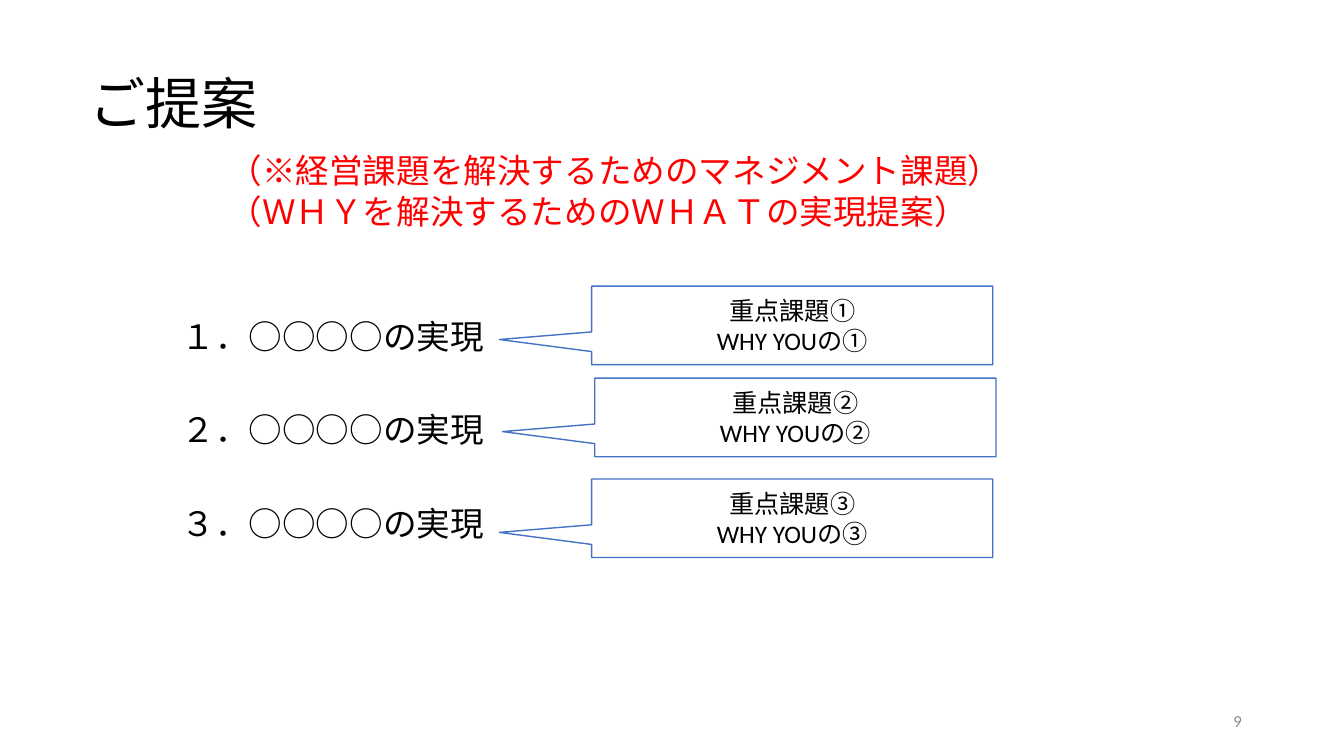
from dataclasses import dataclass

from lxml.etree import SubElement
from pptx import Presentation
from pptx.dml.color import RGBColor
from pptx.enum.shapes import MSO_SHAPE
from pptx.enum.text import MSO_ANCHOR as Anchor, MSO_AUTO_SIZE as AutoSize, PP_ALIGN as Align
from pptx.oxml import parse_xml
from pptx.oxml.ns import nsdecls, qn
from pptx.slide import Slide
from pptx.text.text import TextFrame
from pptx.util import Cm, Pt

BLACK = RGBColor(0x00, 0x00, 0x00)
WHITE = RGBColor(0xFF, 0xFF, 0xFF)
RED = RGBColor(0xFF, 0x00, 0x00)
GRAY = RGBColor(0x8C, 0x8C, 0x8C)
BLUE = RGBColor(0x44, 0x72, 0xC4)
JAPANESE_FONT = "Noto Sans CJK JP"
LATIN_FONT = "Calibri"


@dataclass(frozen=True)
class Box:
    left: float
    top: float
    width: float
    height: float


@dataclass(frozen=True)
class TextStyle:
    size: int
    color: RGBColor
    font: str = JAPANESE_FONT
    align: Align = Align.LEFT
    anchor: Anchor = Anchor.TOP
    line_spacing: float = 1.0


@dataclass(frozen=True)
class Callout:
    mark: str
    left: float
    top: float


TITLE = TextStyle(40, BLACK, anchor=Anchor.MIDDLE, line_spacing=0.9)
PROPOSAL = TextStyle(24, BLACK, line_spacing=0.9)
NOTE = TextStyle(24, RED)
CALLOUT = TextStyle(18, BLACK, LATIN_FONT, Align.CENTER, Anchor.MIDDLE)
PAGE_NUMBER = TextStyle(12, GRAY, LATIN_FONT, Align.RIGHT, Anchor.MIDDLE)

CALLOUTS = [
    Callout("①", 14.91, 7.21),
    Callout("②", 14.99, 9.53),
    Callout("③", 14.91, 12.07),
]


def place(shape, box: Box) -> None:
    shape.left, shape.top = Cm(box.left), Cm(box.top)
    shape.width, shape.height = Cm(box.width), Cm(box.height)


def write(frame: TextFrame, lines: list[str], style: TextStyle) -> None:
    frame.text = "\n".join(lines)
    frame.word_wrap = True
    frame.auto_size = AutoSize.NONE
    frame.vertical_anchor = style.anchor
    for paragraph in frame.paragraphs:
        paragraph.alignment = style.align
        paragraph.line_spacing = style.line_spacing
        font = paragraph.font
        font.size = Pt(style.size)
        font.color.rgb = style.color
        font.name = style.font
        defaults = paragraph._p.pPr.find(qn("a:defRPr"))
        SubElement(defaults, qn("a:ea")).set("typeface", JAPANESE_FONT)


def add_text(slide: Slide, box: Box, lines: list[str], style: TextStyle) -> None:
    shape = slide.shapes.add_textbox(0, 0, 0, 0)
    place(shape, box)
    write(shape.text_frame, lines, style)


def add_proposals(slide: Slide) -> None:
    body = slide.placeholders[1]
    place(body, Box(4.32, 7.95, 21.89, 7.72))
    write(body.text_frame, [f"{number}．○○○○の実現" for number in "１２３"], PROPOSAL)
    for index, paragraph in enumerate(body.text_frame.paragraphs):
        paragraph.space_before = Pt(40.7 if index else 10)
        properties = paragraph._p.pPr
        properties.set("marL", "0")
        properties.set("indent", "0")
        no_bullet = parse_xml(f"<a:buNone {nsdecls('a')}/>")
        properties.find(qn("a:defRPr")).addprevious(no_bullet)


def add_callout(slide: Slide, callout: Callout) -> None:
    shape = slide.shapes.add_shape(MSO_SHAPE.RECTANGULAR_CALLOUT, 0, 0, 0, 0)
    place(shape, Box(callout.left, callout.top, 10.11, 1.98))
    shape.adjustments[0] = -0.73
    shape.adjustments[1] = 0.18
    shape.shadow.inherit = False
    shape.fill.solid()
    shape.fill.fore_color.rgb = WHITE
    shape.line.color.rgb = BLUE
    shape.line.width = Pt(1)
    lines = [f"重点課題{callout.mark}", f"WHY YOUの{callout.mark}"]
    write(shape.text_frame, lines, CALLOUT)


def main() -> None:
    presentation = Presentation()
    presentation.slide_width, presentation.slide_height = Cm(33.87), Cm(19.05)
    slide = presentation.slides.add_slide(presentation.slide_layouts[1])

    place(slide.shapes.title, Box(2.01, 0.84, 29.21, 3.68))
    write(slide.shapes.title.text_frame, ["ご提案"], TITLE)
    add_proposals(slide)
    add_text(slide, Box(23.93, 17.65, 7.62, 1.02), ["9"], PAGE_NUMBER)
    notes = [
        "（※経営課題を解決するためのマネジメント課題）",
        "（ＷＨＹを解決するためのＷＨＡＴの実現提案）",
    ]
    add_text(slide, Box(5.51, 3.66, 22.2, 2.31), notes, NOTE)
    for callout in CALLOUTS:
        add_callout(slide, callout)

    presentation.save("out.pptx")


if __name__ == "__main__":
    main()
